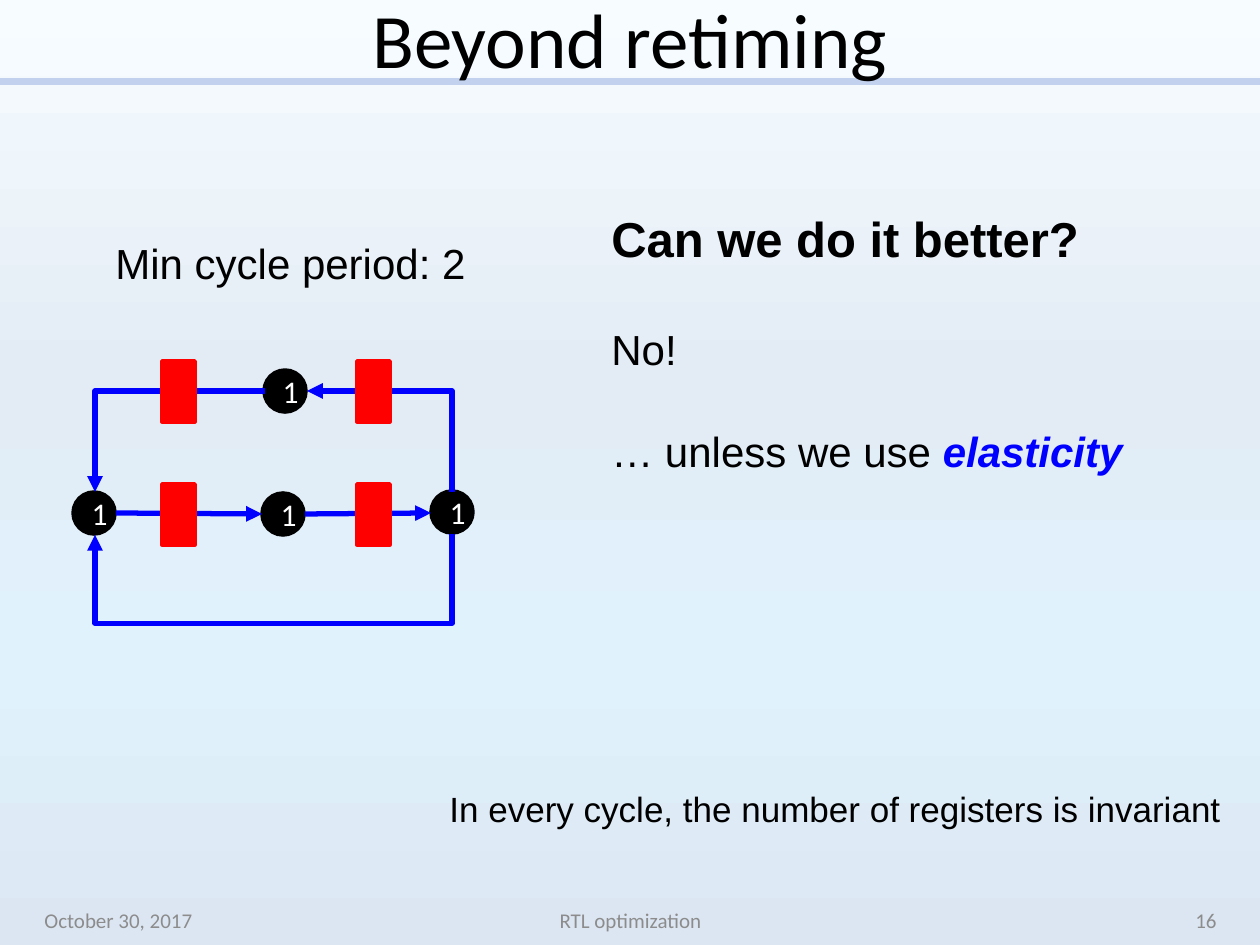
"""Build the 'Beyond retiming' slide with its register graph."""
from dataclasses import dataclass

from lxml.etree import SubElement
from pptx import Presentation
from pptx.dml.color import RGBColor
from pptx.enum.shapes import MSO_CONNECTOR, MSO_SHAPE
from pptx.enum.text import MSO_ANCHOR, PP_ALIGN
from pptx.oxml.ns import qn
from pptx.util import Pt


@dataclass(frozen=True)
class Theme:
    black: str = "000000"
    white: str = "FFFFFF"
    grey: str = "8C8C8C"
    blue: str = "0000FF"
    red: str = "FF0000"
    rule: str = "C2D1ED"
    sky: tuple = ((0, "F7FDFF"), (40, "E3EBF5"), (70, "E0F3FC"), (100, "DCE6F2"))
    heading_font: str = "Calibri"
    body_font: str = "Arial"
    title: int = 44
    question: int = 28
    body: int = 24
    note: int = 20
    node: int = 18
    footer: int = 12


T = Theme()
PX = 7257
WIDTH, HEIGHT = 1260, 945
LEFT, CENTER, RIGHT = PP_ALIGN.LEFT, PP_ALIGN.CENTER, PP_ALIGN.RIGHT

TITLE = ("Beyond retiming", (63, -10, 1134, 95))
FOOTERS = [
    ("October 30, 2017", (32, 895, 294, 50), LEFT),
    ("RTL optimization", (431, 895, 399, 50), CENTER),
    ("16", (935, 895, 294, 50), RIGHT),
]
NOTES = [
    ("In every cycle, the number of registers is invariant", (437, 781, 803, 55), T.note),
    ("Min cycle period: 2", (103, 231, 379, 63), T.body),
]
ANSWER_BOX = (599, 202, 542, 276)
ANSWER = [
    (32, [("Can we do it better?", T.question, T.black, True, False)]),
    (30, [("No!", T.body, T.black, False, False)]),
    (0, [("… unless we use ", T.body, T.black, False, False),
         ("elasticity", T.body, T.blue, True, True)]),
]
DELAY, NODE_SIZE = "1", 42
NODES = [(264, 370), (73, 492), (262, 493), (431, 491)]
REGISTER_X, REGISTER_Y, REGISTER_SIZE = (162, 357), (361, 484), (33, 61)
ARROWS = [(116, 513, 262, 514), (305, 514, 431, 513)]
ELBOWS = [
    ("bentConnector2", (329, 369, 101, 145), 270, True, None),
    ("bentConnector2", (95, 391, 170, 101), 180, True, None),
    ("bentConnector3", (273, 356, 1, 357), 90, False, 90),
]


def px(values):
    return [v * PX for v in values]


def rgb(color):
    return RGBColor.from_string(color)


def add_run(p, text, size, color, font, bold=False, italic=False):
    r = p.add_run()
    r.text = text
    f = r.font
    f.size, f.name, f.bold, f.italic = Pt(size), font, bold, italic
    f.color.rgb = rgb(color)


def add_box(s, box, wrap):
    tf = s.shapes.add_textbox(*px(box)).text_frame
    tf.word_wrap = wrap
    return tf


def paint_background(s):
    fill = s.background.fill
    fill.gradient()
    fill.gradient_angle = 270
    stops = s._element.find(".//" + qn("a:gsLst"))
    stops.clear()
    for pos, color in T.sky:
        gs = SubElement(stops, qn("a:gs"), pos=str(pos * 1000))
        SubElement(gs, qn("a:srgbClr"), val=color)


def add_line(s, ends, color, width, arrow=False, kind=MSO_CONNECTOR.STRAIGHT):
    c = s.shapes.add_connector(kind, *px(ends))
    c.line.color.rgb, c.line.width = rgb(color), Pt(width)
    if arrow:
        SubElement(c.line._get_or_add_ln(), qn("a:tailEnd"), type="triangle")
    SubElement(c._element.spPr, qn("a:effectLst"))
    return c


def add_elbow(s, preset, box, angle, flip, bend):
    x, y, w, h = box
    c = add_line(s, (x, y, x + w, y + h), T.blue, 3, True, MSO_CONNECTOR.ELBOW)
    xfrm = c._element.spPr.find(qn("a:xfrm"))
    xfrm.set("rot", str(angle * 60000))
    if flip:
        xfrm.set("flipV", "1")
    geom = c._element.spPr.find(qn("a:prstGeom"))
    geom.set("prst", preset)
    if bend:
        guides = geom.find(qn("a:avLst"))
        SubElement(guides, qn("a:gd"), name="adj1", fmla=f"val {bend * 100000 // w}")


def add_solid(s, shape, box, color):
    sp = s.shapes.add_shape(shape, *px(box))
    sp.shadow.inherit = False
    sp.fill.solid()
    sp.fill.fore_color.rgb = sp.line.color.rgb = rgb(color)
    sp.line.width = Pt(2)
    return sp


def add_title(s):
    text, box = TITLE
    title = s.shapes.title
    title.left, title.top, title.width, title.height = px(box)
    tf = title.text_frame
    tf.vertical_anchor = MSO_ANCHOR.MIDDLE
    p = tf.paragraphs[0]
    p.alignment = CENTER
    add_run(p, text, T.title, T.black, T.heading_font)


def add_texts(s):
    for text, box, align in FOOTERS:
        tf = add_box(s, box, True)
        tf.vertical_anchor = MSO_ANCHOR.MIDDLE
        p = tf.paragraphs[0]
        p.alignment = align
        add_run(p, text, T.footer, T.grey, T.heading_font)
    for text, box, size in NOTES:
        p = add_box(s, box, False).paragraphs[0]
        add_run(p, text, size, T.black, T.body_font)
    tf = add_box(s, ANSWER_BOX, False)
    for i, (gap, runs) in enumerate(ANSWER):
        p = tf.add_paragraph() if i else tf.paragraphs[0]
        p.space_after = Pt(gap)
        for text, size, color, bold, italic in runs:
            add_run(p, text, size, color, T.body_font, bold, italic)


def add_graph(s):
    for x, y in NODES:
        sp = add_solid(s, MSO_SHAPE.OVAL, (x, y, NODE_SIZE, NODE_SIZE), T.black)
        p = sp.text_frame.paragraphs[0]
        p.alignment = CENTER
        add_run(p, DELAY, T.node, T.white, T.heading_font)
    for ends in ARROWS:
        add_line(s, ends, T.blue, 3, True)
    for elbow in ELBOWS:
        add_elbow(s, *elbow)
    for y in REGISTER_Y:
        for x in REGISTER_X:
            add_solid(s, MSO_SHAPE.RECTANGLE, (x, y, *REGISTER_SIZE), T.red)


def main():
    prs = Presentation()
    prs.slide_width, prs.slide_height = px((WIDTH, HEIGHT))
    s = prs.slides.add_slide(prs.slide_layouts[5])
    paint_background(s)
    rule = add_line(s, (0, 82, WIDTH, 82), T.rule, 4)
    s.shapes.title._element.addprevious(rule._element)
    add_title(s)
    add_texts(s)
    add_graph(s)
    prs.save("out.pptx")


if __name__ == "__main__":
    main()
